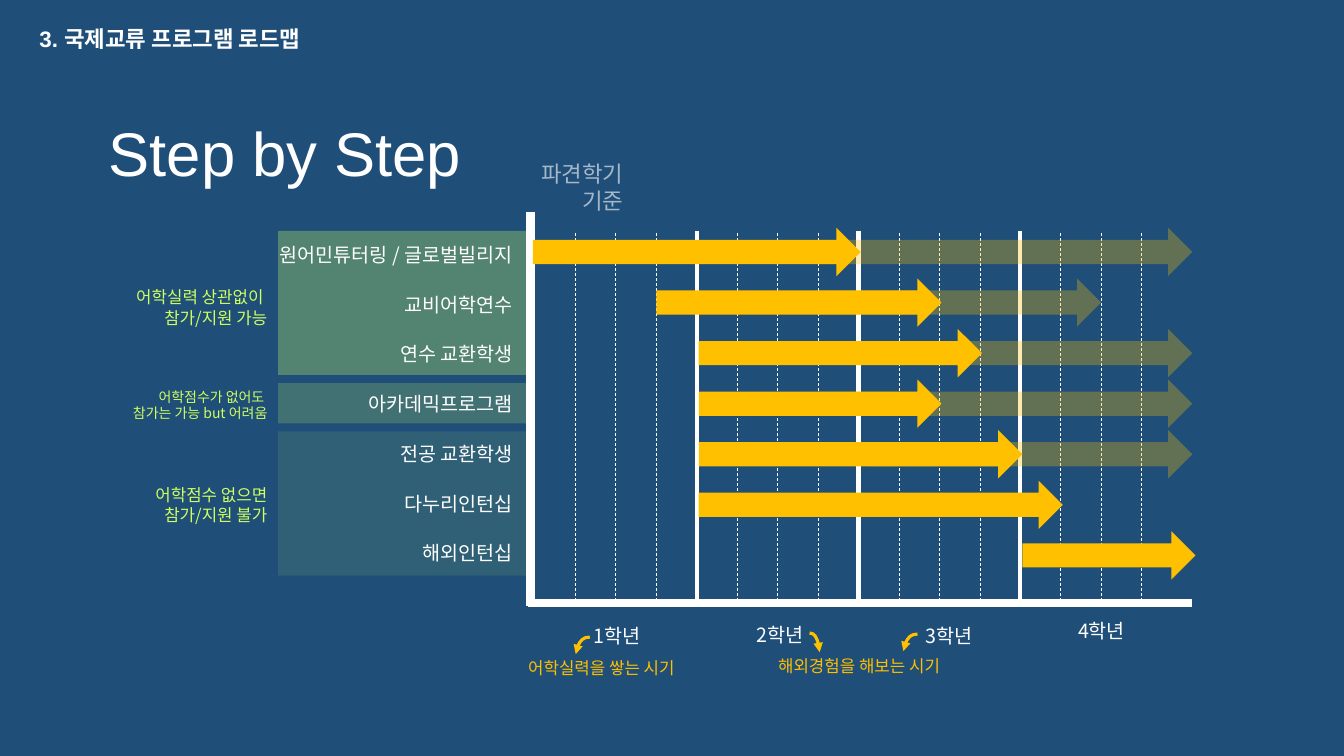
from dataclasses import dataclass
from typing import Optional

from lxml import etree
from pptx import Presentation
from pptx.dml.color import RGBColor
from pptx.enum.dml import MSO_LINE
from pptx.enum.shapes import MSO_CONNECTOR, MSO_SHAPE
from pptx.enum.text import MSO_ANCHOR, MSO_AUTO_SIZE, PP_ALIGN
from pptx.oxml.ns import qn
from pptx.util import Inches, Pt

RECTANGLE = MSO_SHAPE.RECTANGLE
RIGHT_ARROW = MSO_SHAPE.RIGHT_ARROW
STRAIGHT, CURVE = MSO_CONNECTOR.STRAIGHT, MSO_CONNECTOR.CURVE
DASH = MSO_LINE.DASH
LEFT, CENTER, RIGHT = PP_ALIGN.LEFT, PP_ALIGN.CENTER, PP_ALIGN.RIGHT
MIDDLE, TOP = MSO_ANCHOR.MIDDLE, MSO_ANCHOR.TOP
GROW = MSO_AUTO_SIZE.SHAPE_TO_FIT_TEXT

WIDTH, HEIGHT = Inches(13.33), Inches(7.5)


@dataclass(frozen=True)
class Theme:
    navy: str = "1F4E79"
    white: str = "FFFFFF"
    lime: str = "CEFF61"
    amber: str = "FFC000"
    latin: str = "Arial"
    korean: str = "Noto Sans CJK KR"
    title: float = 44
    heading: float = 16
    label: float = 14
    note: float = 12
    small: float = 10
    axis: float = 6
    year_line: float = 3
    hook: float = 2.25
    semester_line: float = 0.5


@dataclass(frozen=True)
class Box:
    left: float
    top: float
    width: float
    height: float


@dataclass(frozen=True)
class Caption:
    box: Box
    lines: tuple[str, ...]
    size: float
    color: str
    align: PP_ALIGN = RIGHT
    alpha: int = 100
    backing: Optional[int] = None


@dataclass(frozen=True)
class Program:
    name: str
    start: float
    end: float
    faded: Optional[tuple[float, float]] = None
    label_left: float = 20.25


@dataclass(frozen=True)
class Stroke:
    start: tuple[float, float]
    end: tuple[float, float]
    color: str
    weight: float
    dashed: bool = False


THEME = Theme()
FIRST_COLUMN, COLUMN = 39.8, 3.01
FIRST_ROW, ROW, ARROW_HEIGHT = 30.13, 6.69, 6.4
FIRST_LABEL, LABEL_STEP, LABEL_RIGHT, LABEL_HEIGHT = 31.47, 6.58, 38.9, 4.53
GRID_TOP, GRID_BOTTOM = 30.53, 80.13

BANDS = (
    (Box(20.7, 50.67, 18.6, 5.33), 20),
    (Box(20.7, 57.07, 18.53, 19.07), 10),
    (Box(20.7, 30.53, 18.68, 19.07), 30),
)
PROGRAMS = (
    Program("원어민튜터링 / 글로벌빌리지", -0.05, 8.05, (7, 16.25), 18.75),
    Program("교비어학연수", 3, 10.05, (7, 14)),
    Program("연수 교환학생", 4.05, 11.05, (8.27, 16.25)),
    Program("아카데믹프로그램", 4.05, 10.05, (7, 16.25)),
    Program("전공 교환학생", 4.05, 12.05, (8.27, 16.25)),
    Program("다누리인턴십", 4.05, 13.05),
    Program("해외인턴십", 12.05, 16.33),
)
YEARS = (("1학년", 42.99, 81.87), ("2학년", 55.14, 81.73),
         ("3학년", 67.74, 81.87), ("4학년", 79.07, 81.2))
CAPTIONS = (
    Caption(Box(36.23, 20.53, 10.88, 4.93), ("파견학기 기준",),
            THEME.heading, THEME.white, alpha=60),
    *(Caption(Box(left, top, 5.78, 4.53), (year,), THEME.label, THEME.white, CENTER)
      for year, left, top in YEARS),
    Caption(Box(38.56, 86.4, 14.03, 4), ("어학실력을 쌓는 시기",),
            THEME.note, THEME.amber, LEFT, backing=50),
    Caption(Box(57.16, 86.13, 16.05, 4), ("해외경험을 해보는 시기",),
            THEME.note, THEME.amber, LEFT, backing=80),
    Caption(Box(7.2, 37.33, 13.43, 6.67), ("어학실력 상관없이 ", "참가/지원 가능"),
            THEME.note, THEME.lime),
    Caption(Box(7.2, 63.47, 13.43, 6.67), ("어학점수 없으면", "참가/지원 불가"),
            THEME.note, THEME.lime),
    Caption(Box(5.63, 50.67, 15, 5.87), ("어학점수가 없어도 ", "참가는 가능 but 어려움"),
            THEME.small, THEME.lime),
)
AXES = (
    Stroke((39.46, 28), (39.46, GRID_BOTTOM), THEME.white, THEME.axis),
    Stroke((39.31, 79.73), (88.67, 79.73), THEME.white, THEME.axis),
)
HOOKS = (
    Stroke((43.89, 84.27), (42.84, 86.53), THEME.amber, THEME.hook),
    Stroke((68.27, 83.87), (67.22, 86.13), THEME.amber, THEME.hook),
    Stroke((60.24, 83.73), (60.99, 86.27), THEME.amber, THEME.hook),
)


def across(share: float) -> int:
    return round(WIDTH * share / 100)


def down(share: float) -> int:
    return round(HEIGHT * share / 100)


def column(index: float) -> float:
    return FIRST_COLUMN + index * COLUMN


def place(box: Box) -> tuple[int, int, int, int]:
    return across(box.left), down(box.top), across(box.width), down(box.height)


def paint(fill, color: str, alpha: int = 100) -> None:
    fill.solid()
    fill.fore_color.rgb = RGBColor.from_string(color)
    if alpha < 100:
        tone = fill._xPr.find(".//" + qn("a:srgbClr"))
        etree.SubElement(tone, qn("a:alpha")).set("val", str(alpha * 1000))


def draw_block(slide, kind: MSO_SHAPE, box: Box, color: str, alpha: int = 100) -> None:
    block = slide.shapes.add_shape(kind, *place(box))
    block.shadow.inherit = False
    block.line.fill.background()
    paint(block.fill, color, alpha)


def draw_caption(slide, caption: Caption, font: str = THEME.korean):
    holder = slide.shapes.add_textbox(*place(caption.box))
    if caption.backing is not None:
        paint(holder.fill, THEME.navy, caption.backing)
    frame = holder.text_frame
    frame.word_wrap = True
    frame.auto_size = GROW
    frame.text = "\n".join(caption.lines)
    for paragraph in frame.paragraphs:
        paragraph.alignment = caption.align
        paragraph.font.size = Pt(caption.size)
        paragraph.font.name = font
        paint(paragraph.font.fill, caption.color, caption.alpha)
        defaults = paragraph._p.pPr.find(qn("a:defRPr"))
        etree.SubElement(defaults, qn("a:ea")).set("typeface", THEME.korean)
    return frame


def draw_heading(slide, caption: Caption, anchor: MSO_ANCHOR, bold: bool = False):
    frame = draw_caption(slide, caption, THEME.latin)
    frame.auto_size = MSO_AUTO_SIZE.NONE
    frame.vertical_anchor = anchor
    frame.paragraphs[0].line_spacing = 0.9
    frame.paragraphs[0].font.bold = bold
    return frame


def draw_stroke(slide, stroke: Stroke, hooked: bool = False) -> None:
    link = slide.shapes.add_connector(
        CURVE if hooked else STRAIGHT,
        across(stroke.start[0]), down(stroke.start[1]),
        across(stroke.end[0]), down(stroke.end[1]))
    link.line.color.rgb = RGBColor.from_string(stroke.color)
    link.line.width = Pt(stroke.weight)
    if stroke.dashed:
        link.line.dash_style = DASH
    properties = link._element.spPr
    if hooked:
        properties.find(qn("a:prstGeom")).set("prst", "curvedConnector2")
        etree.SubElement(link.line._ln, qn("a:tailEnd")).set("type", "triangle")
    etree.SubElement(properties, qn("a:effectLst"))


def draw_program(slide, row: int, program: Program) -> None:
    spans = [(program.start, program.end, 100)]
    if program.faded:
        spans.append((*program.faded, 30))
    for start, end, alpha in spans:
        span = Box(column(start), FIRST_ROW + row * ROW, (end - start) * COLUMN, ARROW_HEIGHT)
        draw_block(slide, RIGHT_ARROW, span, THEME.amber, alpha)
    label = Box(program.label_left, FIRST_LABEL + row * LABEL_STEP,
                LABEL_RIGHT - program.label_left, LABEL_HEIGHT)
    draw_caption(slide, Caption(label, (program.name,), THEME.label, THEME.white))


def main() -> None:
    deck = Presentation()
    deck.slide_width, deck.slide_height = WIDTH, HEIGHT
    slide = deck.slides.add_slide(deck.slide_layouts[6])
    paint(slide.background.fill, THEME.navy)

    for band, alpha in BANDS:
        draw_block(slide, RECTANGLE, band, THEME.lime, alpha)
    draw_heading(slide, Caption(Box(7.35, 14.27, 37.66, 12.8), ("Step by Step",),
                                THEME.title, THEME.white, LEFT), MIDDLE)
    header = draw_heading(slide, Caption(Box(2.4, 3.2, 24.6, 4), ("3. 국제교류 프로그램 로드맵",),
                                         THEME.heading, THEME.white, LEFT), TOP, True)
    header.margin_left = header.margin_right = across(0.53)
    header.margin_top = header.margin_bottom = down(0.53)

    for axis in AXES:
        draw_stroke(slide, axis)
    for semester in range(1, 16):
        new_year = semester % 4 == 0
        x = column(semester)
        draw_stroke(slide, Stroke((x, GRID_BOTTOM), (x, GRID_TOP), THEME.white,
                                  THEME.year_line if new_year else THEME.semester_line,
                                  not new_year))
    for row, program in enumerate(PROGRAMS):
        draw_program(slide, row, program)
    for caption in CAPTIONS:
        draw_caption(slide, caption)
    for hook in HOOKS:
        draw_stroke(slide, hook, hooked=True)
    deck.save("out.pptx")


if __name__ == "__main__":
    main()
